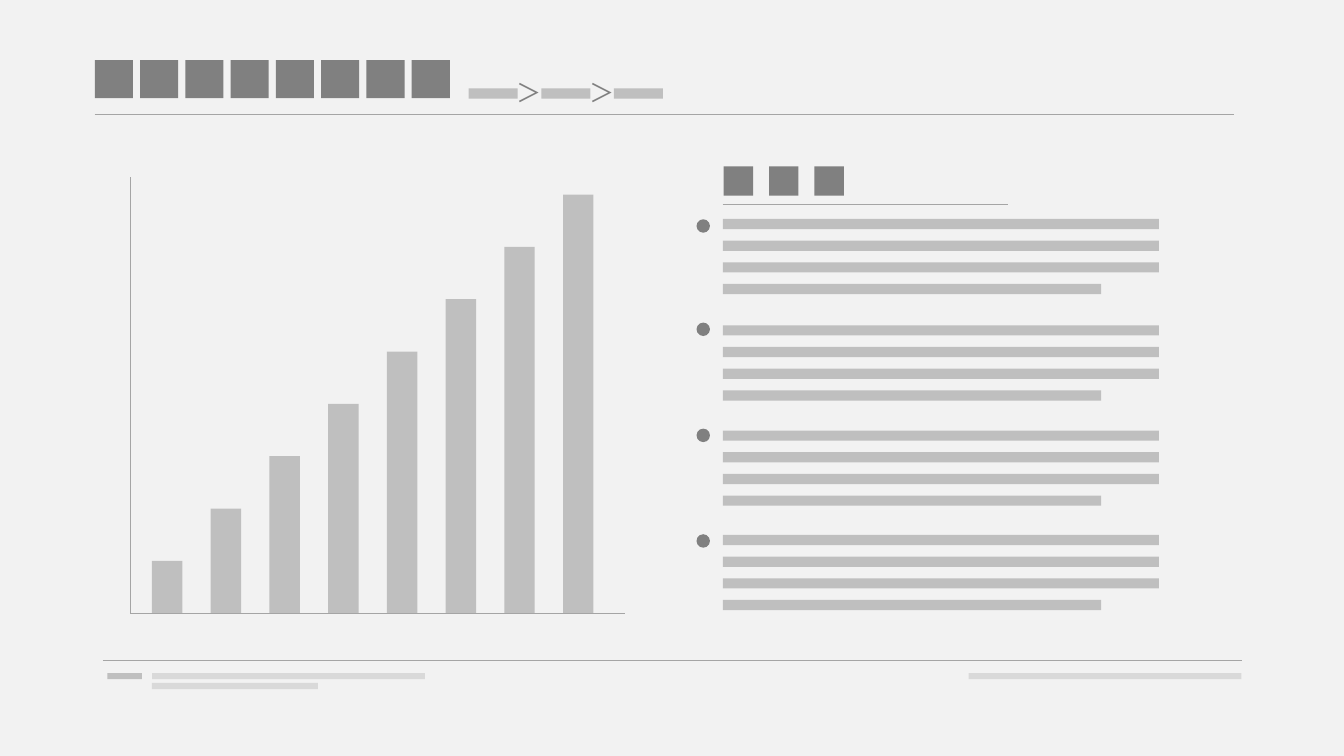
from dataclasses import dataclass

from lxml.etree import SubElement
from pptx import Presentation
from pptx.dml.color import RGBColor
from pptx.enum.shapes import MSO_CONNECTOR as Connector, MSO_SHAPE as Preset
from pptx.enum.text import MSO_AUTO_SIZE as AutoSize
from pptx.oxml.ns import qn
from pptx.shapes.shapetree import _BaseGroupShapes as Shapes
from pptx.util import Inches, Pt

COLUMNS, ROWS = 160, 90
CELL = Inches(7.5) / ROWS
FONT = "Noto Sans CJK SC"
PAPER, DARK, MIDDLE, LIGHT, RULE = "F2F2F2", "808080", "BFBFBF", "D9D9D9", "A5A5A5"
STRIP = 1.22


@dataclass(frozen=True)
class Block:
    column: float
    row: float
    width: float
    height: float
    color: str


@dataclass(frozen=True)
class SquareRow:
    column: float
    row: float
    size: float
    pitch: float
    count: int


@dataclass(frozen=True)
class Rule:
    start: tuple[float, float]
    end: tuple[float, float]


@dataclass(frozen=True)
class Item:
    text_row: float
    dot_row: float


HEADINGS = [
    SquareRow(11.28, 7.15, 4.54, 5.39, 8),
    SquareRow(86.16, 19.8, 3.5, 5.4, 3),
]
RULES = [
    Rule((11.28, 13.6), (146.88, 13.6)),
    Rule((86.04, 24.35), (120, 24.35)),
    Rule((12.24, 78.6), (147.84, 78.6)),
]
AXES = [Rule((15.48, 21.12), (15.48, 73)), Rule((15.48, 73), (74.4, 73))]
ITEMS = [Item(26.07, 26.1), Item(38.73, 38.4), Item(51.26, 51.03), Item(63.69, 63.6)]
FOOTER = [
    Block(12.8, 80.12, 4.1, 0.74, MIDDLE),
    Block(18.1, 80.12, 32.5, 0.74, LIGHT),
    Block(18.1, 81.3, 19.75, 0.74, LIGHT),
    Block(115.3, 80.12, 32.5, 0.74, LIGHT),
]


def cells(count: float) -> int:
    return round(count * CELL)


def rgb(color: str) -> RGBColor:
    return RGBColor.from_string(color)


def draw_block(shapes: Shapes, block: Block, preset: Preset = Preset.RECTANGLE) -> None:
    shape = shapes.add_shape(
        preset, cells(block.column), cells(block.row), cells(block.width), cells(block.height)
    )
    shape.shadow.inherit = False
    shape.fill.solid()
    shape.fill.fore_color.rgb = rgb(block.color)
    shape.line.fill.background()


def draw_rule(shapes: Shapes, rule: Rule) -> None:
    connector = shapes.add_connector(
        Connector.STRAIGHT, *(cells(value) for value in rule.start + rule.end)
    )
    connector.line.color.rgb = rgb(RULE)
    connector.line.width = Pt(0.5)
    SubElement(connector._element.spPr, qn("a:effectLst"))


def draw_squares(shapes: Shapes, squares: SquareRow) -> None:
    for index in range(squares.count):
        column = squares.column + index * squares.pitch
        draw_block(shapes, Block(column, squares.row, squares.size, squares.size, DARK))


def draw_separator(shapes: Shapes, column: float) -> None:
    box = shapes.add_textbox(cells(column), cells(8.64), cells(5.4), cells(4.85))
    frame = box.text_frame
    frame.text = "＞"
    frame.word_wrap = False
    frame.auto_size = AutoSize.SHAPE_TO_FIT_TEXT
    run = frame.paragraphs[0].runs[0]
    run.font.size = Pt(18)
    run.font.color.rgb = rgb(DARK)
    run.font.name = FONT
    SubElement(run.font._element, qn("a:ea"), typeface=FONT)


def draw_breadcrumb(shapes: Shapes) -> None:
    for index in range(3):
        offset = index * 8.64
        draw_block(shapes, Block(55.8 + offset, 10.54, 5.84, STRIP, MIDDLE))
        if index < 2:
            draw_separator(shapes, 60.36 + offset)


def draw_bars(shapes: Shapes) -> None:
    group = shapes.add_group_shape().shapes
    for index in range(8):
        height = 6.23 * (index + 1)
        draw_block(group, Block(18.1 + index * 6.99, 73 - height, 3.63, height, MIDDLE))
    for axis in AXES:
        draw_rule(group, axis)


def draw_item(shapes: Shapes, item: Item) -> None:
    group = shapes.add_group_shape().shapes
    for index, width in enumerate([51.92, 51.92, 51.92, 45.02]):
        draw_block(group, Block(86.06, item.text_row + index * 2.58, width, STRIP, MIDDLE))
    draw_block(group, Block(82.92, item.dot_row, 1.6, 1.6, DARK), Preset.OVAL)


def main() -> None:
    presentation = Presentation()
    presentation.slide_width = cells(COLUMNS)
    presentation.slide_height = cells(ROWS)
    slide = presentation.slides.add_slide(presentation.slide_layouts[6])
    slide.background.fill.solid()
    slide.background.fill.fore_color.rgb = rgb(PAPER)
    shapes = slide.shapes

    for squares in HEADINGS:
        draw_squares(shapes, squares)
    draw_breadcrumb(shapes)
    draw_bars(shapes)
    for item in ITEMS:
        draw_item(shapes, item)
    for rule in RULES:
        draw_rule(shapes, rule)
    for block in FOOTER:
        draw_block(shapes, block)

    presentation.save("out.pptx")


if __name__ == "__main__":
    main()
